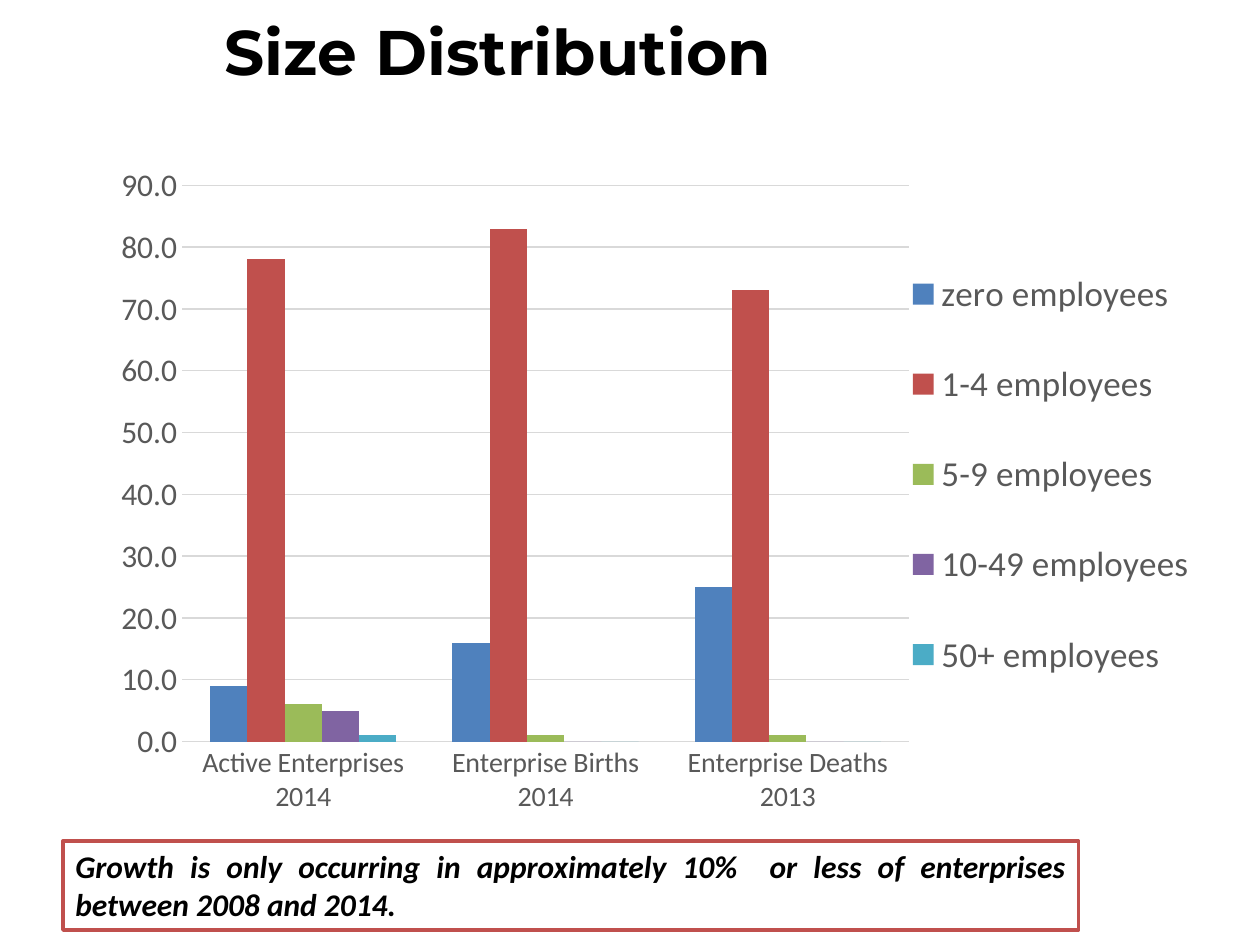
import pptx
import pptx.chart.data
import pptx.dml.color
import pptx.enum.chart
import pptx.enum.shapes
import pptx.enum.text
import pptx.oxml
import pptx.oxml.ns
import pptx.util

Pt = pptx.util.Pt
ALIGN = pptx.enum.text.PP_ALIGN
ANCHOR = pptx.enum.text.MSO_ANCHOR

COLORS = {
    "white": "FFFFFF", "black": "000000", "label": "595959", "grid": "D9D9D9",
    "blue": "4F81BD", "red": "C0504D", "green": "9BBB59",
    "purple": "8064A2", "aqua": "4BACC6",
}
CATEGORIES = ["Active Enterprises 2014", "Enterprise Births 2014", "Enterprise Deaths 2013"]
SIZE_CLASSES = [
    ("zero employees", "blue", (9, 16, 25)),
    ("1-4 employees", "red", (78, 83, 73)),
    ("5-9 employees", "green", (6, 1, 1)),
    ("10-49 employees", "purple", (5, 0, 0)),
    ("50+ employees", "aqua", (1, 0, 0)),
]


def rgb(name):
    return pptx.dml.color.RGBColor.from_string(COLORS[name])


def set_font(font, size, color="label", name="Calibri", bold=False, italic=False):
    font.name, font.size = name, Pt(size)
    font.bold, font.italic = bold, italic
    font.color.rgb = rgb(color)


def write_text(shape, text, align=ALIGN.LEFT, anchor=ANCHOR.TOP, **font_format):
    frame = shape.text_frame
    frame.word_wrap = True
    frame.vertical_anchor = anchor
    paragraph = frame.paragraphs[0]
    paragraph.alignment = align
    run = paragraph.add_run()
    run.text = text
    set_font(run.font, **font_format)


def set_layout(parent, index, inner=False, **percents):
    """Place a chart part by percentages of the chart's size."""
    for old in parent.findall(pptx.oxml.ns.qn("c:layout")):
        parent.remove(old)
    fields = [("layoutTarget", "inner")] if inner else []
    fields += [("xMode", "edge"), ("yMode", "edge")]
    fields += [(tag, f"{percent / 100:.3f}") for tag, percent in percents.items()]
    body = "".join(f'<c:{tag} val="{value}"/>' for tag, value in fields)
    parent.insert(index, pptx.oxml.parse_xml(
        f'<c:layout {pptx.oxml.ns.nsdecls("c")}><c:manualLayout>{body}</c:manualLayout></c:layout>'))


def add_title(slide, box):
    title = slide.shapes.add_textbox(*map(Pt, box))
    write_text(title, "Size Distribution", align=ALIGN.CENTER,
               size=36, color="black", name="Montserrat", bold=True)


def add_size_chart(slide, box):
    data = pptx.chart.data.CategoryChartData(number_format="0.0")
    data.categories = CATEGORIES
    for name, _, shares in SIZE_CLASSES:
        data.add_series(name, shares)
    chart = slide.shapes.add_chart(
        pptx.enum.chart.XL_CHART_TYPE.COLUMN_CLUSTERED, *map(Pt, box), data).chart
    chart.has_title = False
    set_font(chart.font, 10, "black")

    # Columns
    plot = chart.plots[0]
    plot.gap_width, plot.overlap = 150, 0
    plot.vary_by_categories = False
    for series, (_, color, _) in zip(plot.series, SIZE_CLASSES):
        series.format.fill.solid()
        series.format.fill.fore_color.rgb = rgb(color)
        series.invert_if_negative = False

    # Axes and gridlines
    for axis, size in ((chart.category_axis, 16), (chart.value_axis, 18)):
        axis.major_tick_mark = axis.minor_tick_mark = pptx.enum.chart.XL_TICK_MARK.NONE
        axis.format.line.fill.background()
        set_font(axis.tick_labels.font, size)
    shares_axis = chart.value_axis
    shares_axis.minimum_scale, shares_axis.maximum_scale, shares_axis.major_unit = 0, 90, 10
    shares_axis.tick_labels.number_format = "#,##0.0"
    shares_axis.tick_labels.number_format_is_linked = False
    shares_axis.has_major_gridlines = True
    gridline = shares_axis.major_gridlines.format.line
    gridline.width = Pt(0.75)
    gridline.color.rgb = rgb("grid")

    # Legend and plot area
    chart.has_legend = True
    legend = chart.legend
    legend.position = pptx.enum.chart.XL_LEGEND_POSITION.RIGHT
    legend.include_in_layout = False
    set_font(legend.font, 20)
    set_layout(legend._element, 1, x=73.4, y=10, w=26, h=73)
    plot_area = chart._chartSpace.chart.plotArea
    set_layout(plot_area, 0, inner=True, x=8.6, y=4.1, w=64.9, h=81.6)


def add_growth_note(slide, box):
    note = slide.shapes.add_shape(pptx.enum.shapes.MSO_SHAPE.RECTANGLE, *map(Pt, box))
    note.shadow.inherit = False
    note.fill.solid()
    note.fill.fore_color.rgb = rgb("white")
    note.line.color.rgb = rgb("red")
    note.line.width = Pt(2)
    write_text(note, "Growth is only occurring in approximately 10%  or less of enterprises "
               "between 2008 and 2014.", align=ALIGN.JUSTIFY,
               size=18, color="black", bold=True, italic=True)


def main():
    deck = pptx.Presentation()
    deck.slide_width, deck.slide_height = Pt(720), Pt(540)
    slide = deck.slides.add_slide(deck.slide_layouts[6])
    add_title(slide, (18.7, 3.6, 531.4, 85))
    add_size_chart(slide, (49, 90, 640, 389.5))
    add_growth_note(slide, (36, 480.5, 580.3, 51))
    deck.save("out.pptx")


if __name__ == "__main__":
    main()
